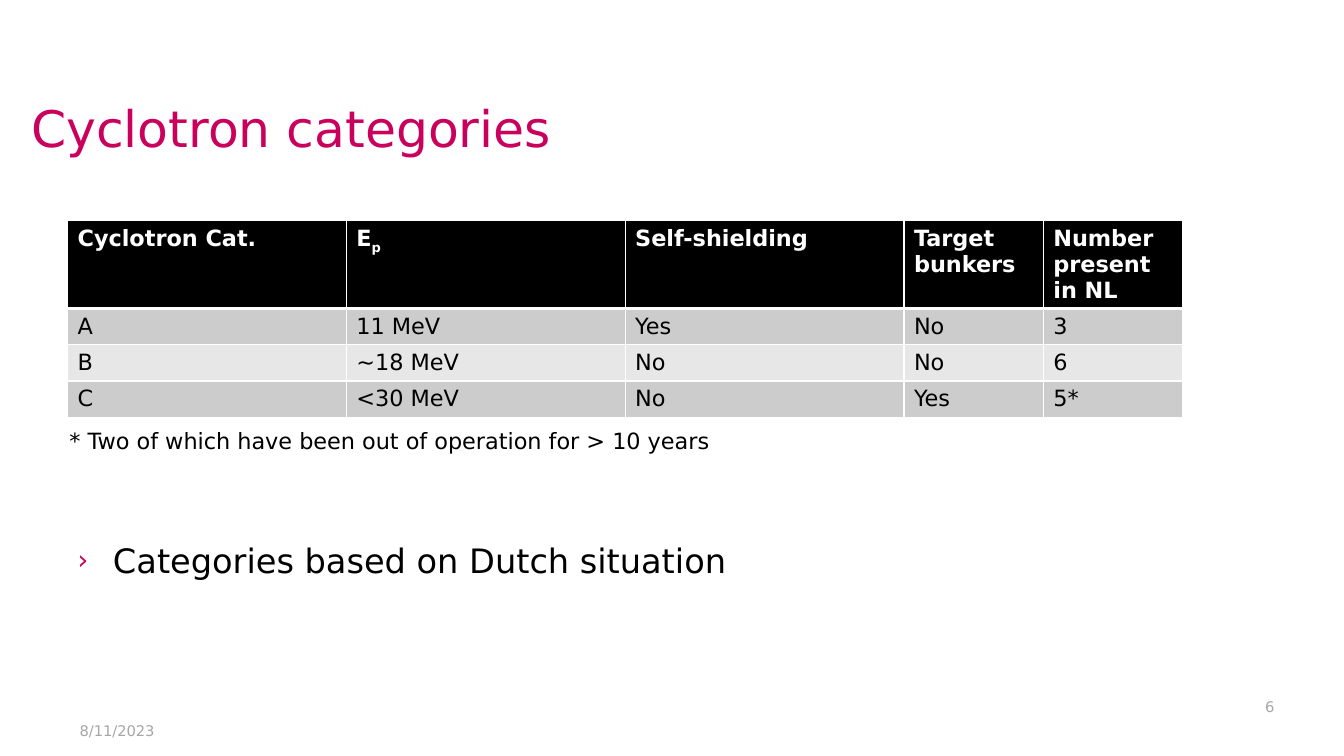
from lxml import etree
from pptx import Presentation
from pptx import util as u
from pptx.dml import color
from pptx.enum import text
from pptx.oxml import ns

FONT = "DejaVu Sans"
BLACK, WHITE, PINK, GREY = "000000", "FFFFFF", "CA005D", "A6A6A6"
BANDS = ["CCCCCC", "E7E7E7"]
SLIDE_WIDTH, SLIDE_HEIGHT = u.Inches(13.33), u.Inches(7.5)

TITLE_BOX = (1.58, 7.73, 89.65, 13.87)
TABLE_BOX = (5.03, 29.2, 82.97, 26)
NOTE_BOX = (4.43, 55.87, 88.9, 4.93)
BODY_BOX = (5.03, 71.33, 105.7, 57.33)
NUMBER_BOX = (53.79, 90.67, 41.04, 4.67)
DATE_BOX = (5.18, 95.47, 41.04, 3.87)

COLUMN_SHARES = [2, 2, 2, 1, 1]
HEADER_HEIGHT, ROW_HEIGHT = 11.6, 4.8
CATEGORIES = [
    ["Cyclotron Cat.", "E", "Self-shielding", "Target bunkers", "Number present in NL"],
    ["A", "11 MeV", "Yes", "No", "3"],
    ["B", "~18 MeV", "No", "No", "6"],
    ["C", "<30 MeV", "No", "Yes", "5*"],
]


def rgb(value):
    """Turn a hex string into a colour."""
    return color.RGBColor.from_string(value)


def across(share):
    """Return a percentage of the slide's width."""
    return round(SLIDE_WIDTH * share / 100)


def down(share):
    """Return a percentage of the slide's height."""
    return round(SLIDE_HEIGHT * share / 100)


def measure(box):
    """Return left, top, width and height of a box given in percent."""
    left, top, width, height = box
    return across(left), down(top), across(width), down(height)


def place(shape, box):
    """Move and size a shape to a box."""
    shape.left, shape.top, shape.width, shape.height = measure(box)


def style(para, size, hue, bold=False):
    """Set the font of a paragraph."""
    font = para.font
    font.name, font.size, font.bold = FONT, u.Pt(size), bold
    font.color.rgb = rgb(hue)


def add_child(parent, tag, **attributes):
    """Append a drawing element to a parent."""
    return etree.SubElement(parent, ns.qn(tag), attributes)


def add_title(page, box):
    """Fill the title placeholder."""
    title = page.shapes.title
    place(title, box)
    frame = title.text_frame
    frame.text = "Cyclotron categories"
    frame.vertical_anchor = text.MSO_ANCHOR.BOTTOM
    frame.auto_size = text.MSO_AUTO_SIZE.NONE
    para = frame.paragraphs[0]
    para.alignment = text.PP_ALIGN.LEFT
    para.line_spacing = 0.9
    style(para, 36, PINK)


def add_body(page, box):
    """Fill the two-column body placeholder with its bullet."""
    body = page.placeholders[1]
    place(body, box)
    frame = body.text_frame
    frame.text = "Categories based on Dutch situation"
    frame.vertical_anchor = text.MSO_ANCHOR.TOP
    frame.auto_size = text.MSO_AUTO_SIZE.NONE
    columns = frame._txBody.bodyPr
    columns.set("numCol", "2")
    columns.set("spcCol", str(u.Inches(0.51)))
    para = frame.paragraphs[0]
    para.line_spacing = 0.9
    para.space_before = u.Pt(0)
    bullet = para._p.get_or_add_pPr()
    bullet.set("marL", str(u.Inches(0.35)))
    bullet.set("indent", str(-u.Inches(0.35)))
    add_child(add_child(bullet, "a:buClr"), "a:srgbClr", val=PINK)
    add_child(bullet, "a:buSzPct", val="80000")
    add_child(bullet, "a:buFont", typeface=FONT)
    add_child(bullet, "a:buChar", char="›")
    style(para, 24, BLACK)


def add_borders(cell, top, bottom):
    """Draw white cell borders, with top and bottom widths in points."""
    properties = cell._tc.get_or_add_tcPr()
    for side, width in {"L": 1, "R": 1, "T": top, "B": bottom}.items():
        line = add_child(properties, f"a:ln{side}", w=str(u.Pt(width)))
        add_child(add_child(line, "a:solidFill"), "a:srgbClr", val=WHITE)


def add_categories(page, box):
    """Add the table of cyclotron categories."""
    frame = page.shapes.add_table(len(CATEGORIES), len(COLUMN_SHARES), *measure(box))
    table = frame.table
    for column, share in zip(table.columns, COLUMN_SHARES):
        column.width = across(box[2] * share / sum(COLUMN_SHARES))
    for index, (row, words) in enumerate(zip(table.rows, CATEGORIES)):
        header = index == 0
        row.height = down(HEADER_HEIGHT if header else ROW_HEIGHT)
        for cell, word in zip(row.cells, words):
            cell.text = word
            add_borders(cell, 3 if index == 1 else 1, 3 if header else 1)
            cell.fill.solid()
            cell.fill.fore_color.rgb = rgb(BLACK if header else BANDS[(index - 1) % 2])
            style(cell.text_frame.paragraphs[0], 16, WHITE if header else BLACK, header)
    span = table.cell(0, 1).text_frame.paragraphs[0].add_run()
    span.text = "p"
    span.font._element.set("baseline", "-25000")


def add_label(page, box, words, size, hue, margins=(0.1, 0.05, 0.1, 0.05),
              anchor=text.MSO_ANCHOR.TOP, align=text.PP_ALIGN.LEFT):
    """Add one line of text in a box."""
    frame = page.shapes.add_textbox(*measure(box)).text_frame
    frame.word_wrap = True
    frame.vertical_anchor = anchor
    (frame.margin_left, frame.margin_top,
     frame.margin_right, frame.margin_bottom) = map(u.Inches, margins)
    frame.text = words
    para = frame.paragraphs[0]
    para.alignment = align
    style(para, size, hue)


def add_footer(page, number_box, date_box):
    """Add the slide number and the date."""
    add_label(page, number_box, "6", 10.5, GREY, (0.1, 0.05, 0, 0.05),
              text.MSO_ANCHOR.BOTTOM, text.PP_ALIGN.RIGHT)
    add_label(page, date_box, "8/11/2023", 10.5, GREY, (0.1, 0, 0.1, 0.05))


def main():
    """Build the slide and save the deck."""
    deck = Presentation()
    deck.slide_width, deck.slide_height = SLIDE_WIDTH, SLIDE_HEIGHT
    page = deck.slides.add_slide(deck.slide_layouts[1])
    add_title(page, TITLE_BOX)
    add_categories(page, TABLE_BOX)
    add_body(page, BODY_BOX)
    add_label(page, NOTE_BOX, "* Two of which have been out of operation for > 10 years", 16, BLACK)
    add_footer(page, NUMBER_BOX, DATE_BOX)
    deck.save("out.pptx")


if __name__ == "__main__":
    main()
